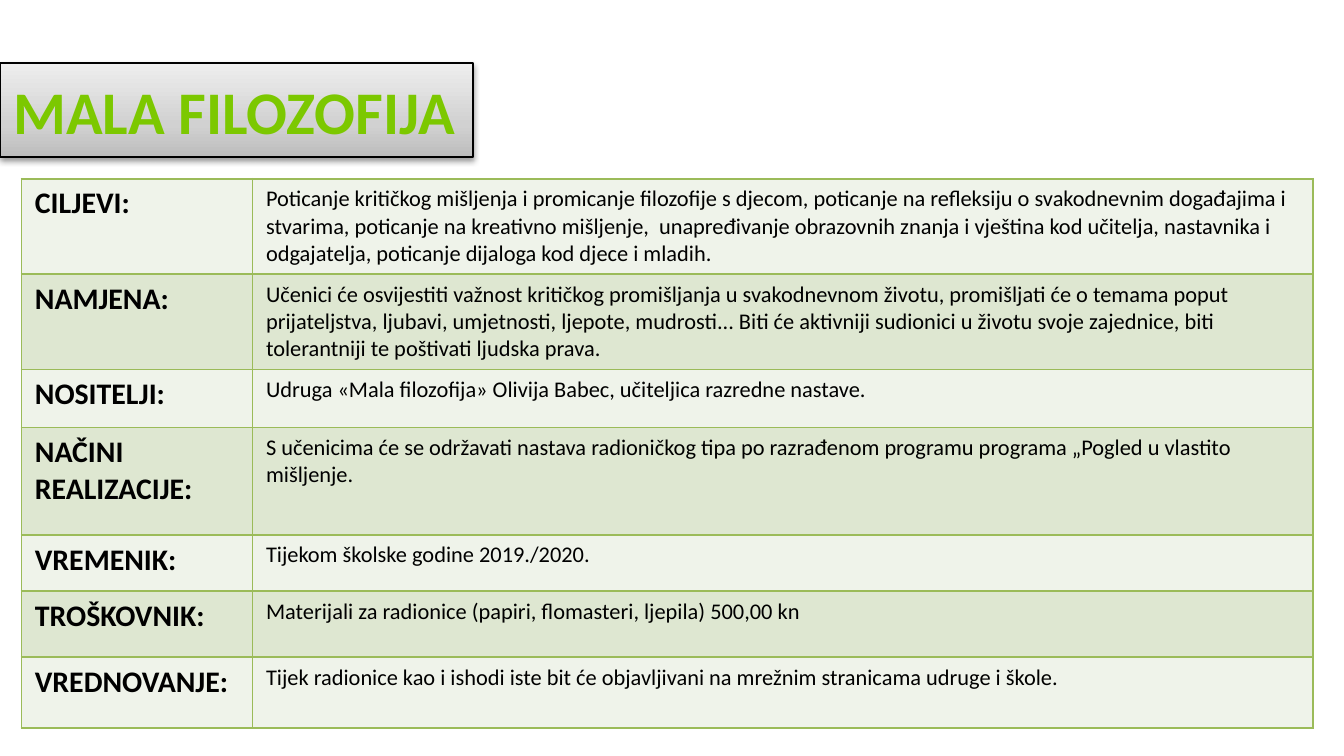
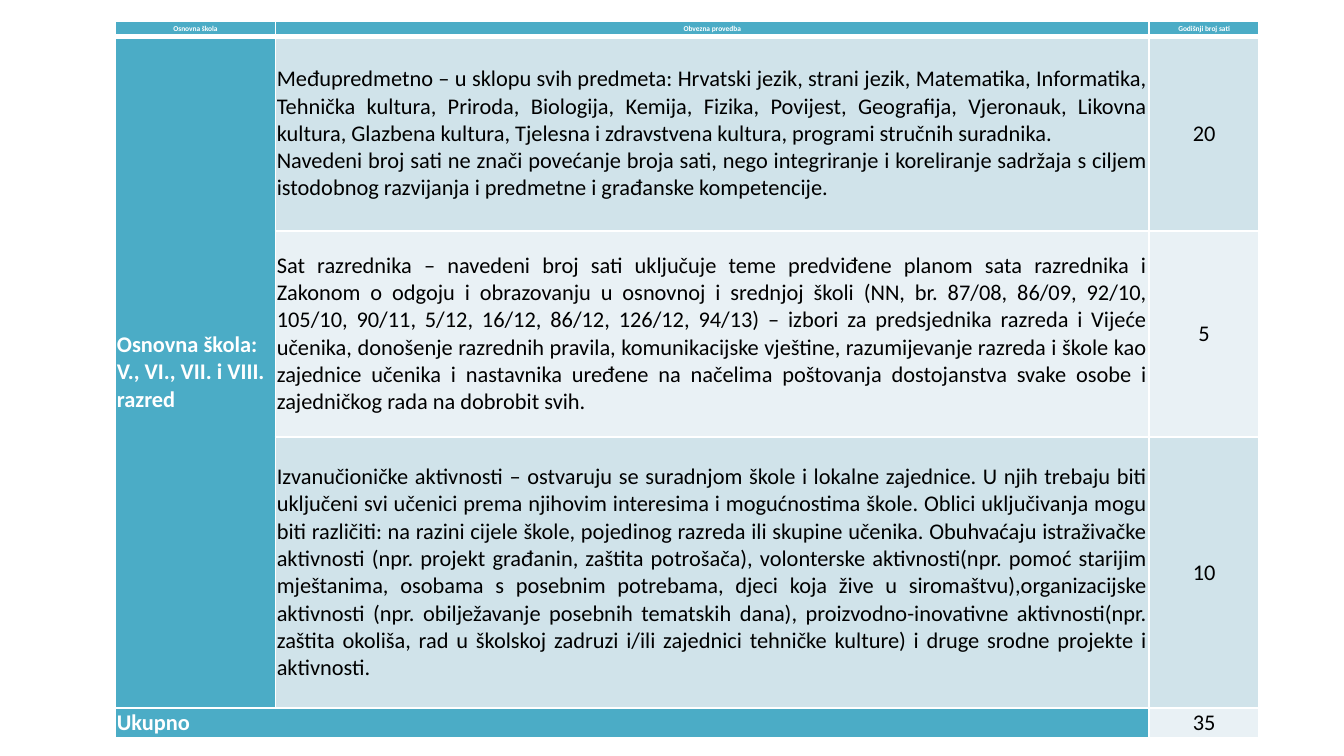
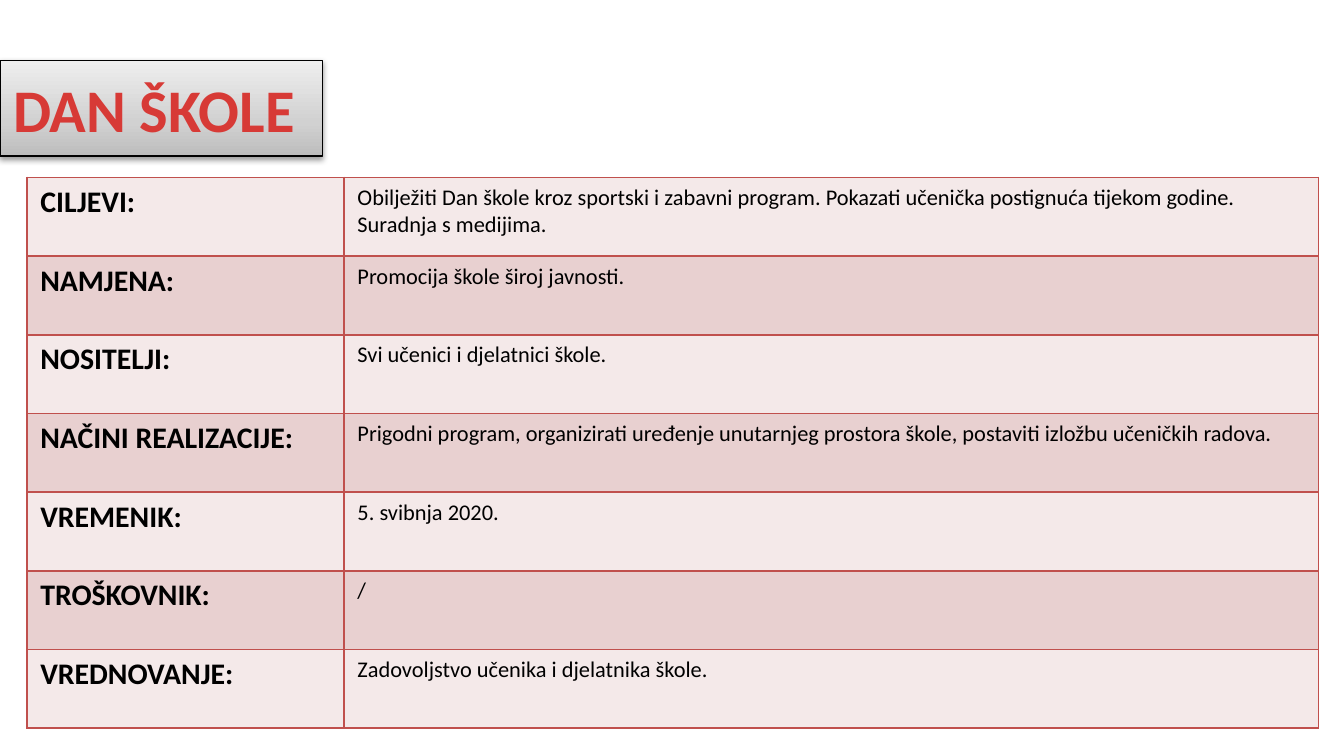
import copy

import lxml.etree
import pptx
import pptx.dml.color
import pptx.enum.shapes
import pptx.enum.text
import pptx.oxml.ns
import pptx.util

Inches = pptx.util.Inches
Pt = pptx.util.Pt
qn = pptx.oxml.ns.qn
ALIGN = pptx.enum.text.PP_ALIGN
MIDDLE = pptx.enum.text.MSO_ANCHOR.MIDDLE
TOP = pptx.enum.text.MSO_ANCHOR.TOP

FONT = "Calibri"
BLACK = "000000"
WHITE = "FFFFFF"
TEAL = "4BACC6"
TEAL_BANDS = ["D0E3EA", "E9F1F5"]
TITLE_STOPS = [(0, "BDBDBD"), (0.35, "D1D1D1"), (1, "EEEEEE")]
LABELS = ["CILJEVI:", "NAMJENA:", "NOSITELJI:", "NAČINI REALIZACIJE:",
          "VREMENIK:", "TROŠKOVNIK:", "VREDNOVANJE:"]


def color(value):
    return pptx.dml.color.RGBColor.from_string(value)


def write_cell(cell, lines, fill, borders, cell_format, text_format, text_color):
    properties = cell._tc.get_or_add_tcPr()
    for side, (border_color, width) in borders.items():
        line = lxml.etree.SubElement(properties, qn("a:ln" + side), w=str(Pt(width)))
        solid = lxml.etree.SubElement(line, qn("a:solidFill"))
        lxml.etree.SubElement(solid, qn("a:srgbClr"), val=border_color)
    cell.fill.solid()
    cell.fill.fore_color.rgb = color(fill)
    for name, value in cell_format.items():
        setattr(cell, name, value)
    for index, (text, alignment) in enumerate(lines):
        frame = cell.text_frame
        para = frame.paragraphs[0] if index == 0 else frame.add_paragraph()
        para.alignment = alignment
        span = para.add_run()
        span.text = text
        for name, value in text_format.items():
            setattr(span.font, name, value)
        span.font.color.rgb = color(text_color)


activities = [
    {
        "title": "MALA FILOZOFIJA", "title_color": "7CC800",
        "title_box": (0, 0.47, 3.52, 0.7),
        "left": 0.16, "top": 1.33, "columns": [1.72, 7.89],
        "rows": [0.7, 0.7, 0.43, 0.8, 0.42, 0.49, 0.53],
        "border": "9BBB59", "bands": ["EFF3EA", "DEE7D1"],
        "details": [
            "Poticanje kritičkog mišljenja i promicanje filozofije s djecom, poticanje na refleksiju o svakodnevnim događajima i stvarima, poticanje na kreativno mišljenje,  unapređivanje obrazovnih znanja i vještina kod učitelja, nastavnika i odgajatelja, poticanje dijaloga kod djece i mladih.",
            "Učenici će osvijestiti važnost kritičkog promišljanja u svakodnevnom životu, promišljati će o temama poput prijateljstva, ljubavi, umjetnosti, ljepote, mudrosti... Biti će aktivniji sudionici u životu svoje zajednice, biti tolerantniji te poštivati ljudska prava.",
            "Udruga «Mala filozofija» Olivija Babec, učiteljica razredne nastave.",
            "S učenicima će se održavati nastava radioničkog tipa po razrađenom programu programa „Pogled u vlastito mišljenje.",
            "Tijekom školske godine 2019./2020.",
            "Materijali za radionice (papiri, flomasteri, ljepila) 500,00 kn",
            "Tijek radionice kao i ishodi iste bit će objavljivani na mrežnim stranicama udruge i škole.",
        ],
    },
    {
        "title": "DAN ŠKOLE", "title_color": "D73A36",
        "title_box": (0, 0.45, 2.4, 0.71),
        "left": 0.2, "top": 1.32, "columns": [2.36, 7.25],
        "rows": [4.1 / len(LABELS)] * len(LABELS),
        "border": "C0504D", "bands": ["F4E9E9", "E8D0D0"],
        "details": [
            "Obilježiti Dan škole kroz sportski i zabavni program. Pokazati učenička postignuća tijekom godine. Suradnja s medijima.",
            "Promocija škole široj javnosti.",
            "Svi učenici i djelatnici škole.",
            "Prigodni program, organizirati uređenje unutarnjeg prostora škole, postaviti izložbu učeničkih radova.",
            "5. svibnja 2020.",
            "/",
            "Zadovoljstvo učenika i djelatnika škole.",
        ],
    },
]

hours = {
    "left": 0.86, "top": 0.16, "columns": [1.19, 6.5, 0.82],
    "rows": [0.11, 1.45, 1.53, 2.02, 0.2],
    "header": ["Osnovna škola", "Obvezna provedba", "Godišnji broj sati"],
    "school": [("Osnovna škola:", ALIGN.JUSTIFY), ("V., VI., VII. i VIII. razred", ALIGN.LEFT)],
    "programme": [
        (["Međupredmetno – u sklopu svih predmeta: Hrvatski jezik, strani jezik, Matematika, Informatika, Tehnička kultura, Priroda, Biologija, Kemija, Fizika, Povijest, Geografija, Vjeronauk, Likovna kultura, Glazbena kultura, Tjelesna i zdravstvena kultura, programi stručnih suradnika.",
          "Navedeni broj sati ne znači povećanje broja sati, nego integriranje i koreliranje sadržaja s ciljem istodobnog razvijanja i predmetne i građanske kompetencije."], "20"),
        (["Sat razrednika – navedeni broj sati uključuje teme predviđene planom sata razrednika i Zakonom o odgoju i obrazovanju u osnovnoj i srednjoj školi (NN, br. 87/08, 86/09, 92/10, 105/10, 90/11, 5/12, 16/12, 86/12, 126/12, 94/13) – izbori za predsjednika razreda i Vijeće učenika, donošenje razrednih pravila, komunikacijske vještine, razumijevanje razreda i škole kao zajednice učenika i nastavnika uređene na načelima poštovanja dostojanstva svake osobe i zajedničkog rada na dobrobit svih."], "5"),
        (["Izvanučioničke aktivnosti – ostvaruju se suradnjom škole i lokalne zajednice. U njih trebaju biti uključeni svi učenici prema njihovim interesima i mogućnostima škole. Oblici uključivanja mogu biti različiti: na razini cijele škole, pojedinog razreda ili skupine učenika. Obuhvaćaju istraživačke aktivnosti (npr. projekt građanin, zaštita potrošača), volonterske aktivnosti(npr. pomoć starijim mještanima, osobama s posebnim potrebama, djeci koja žive u siromaštvu),organizacijske aktivnosti (npr. obilježavanje posebnih tematskih dana), proizvodno-inovativne aktivnosti(npr. zaštita okoliša, rad u školskoj zadruzi i/ili zajednici tehničke kulture) i druge srodne projekte i aktivnosti."], "10"),
    ],
}

deck = pptx.Presentation()
deck.slide_width = Inches(10)
deck.slide_height = deck.slide_width * 9 // 16
pages = [deck.slides.add_slide(deck.slide_layouts[6]) for _ in range(3)]

tables = []
for page, layout in zip(pages, [activities[0], hours, activities[1]]):
    frame = page.shapes.add_table(
        len(layout["rows"]), len(layout["columns"]),
        Inches(layout["left"]), Inches(layout["top"]),
        Inches(sum(layout["columns"])), Inches(sum(layout["rows"])))
    table = frame.table
    table.first_row = False
    table.horz_banding = False
    for column, width in zip(table.columns, layout["columns"]):
        column.width = Inches(width)
    for row, height in zip(table.rows, layout["rows"]):
        row.height = Inches(height)
    tables.append(table)

for page, table, activity in zip(pages[::2], tables[::2], activities):
    box = page.shapes.add_shape(
        pptx.enum.shapes.MSO_SHAPE.RECTANGLE, *map(Inches, activity["title_box"]))
    box.fill.gradient()
    box.fill.gradient_angle = 90
    stop_list = box._element.spPr.find(".//" + qn("a:gsLst"))
    stop_list.append(copy.deepcopy(stop_list[0]))
    for stop, (position, shade) in zip(box.fill.gradient_stops, TITLE_STOPS):
        stop.position = position
        stop.color.rgb = color(shade)
    box.line.color.rgb = color(BLACK)
    box.line.width = Pt(0.75)
    box.shadow.inherit = False
    effects = box._element.spPr.find(qn("a:effectLst"))
    shadow = lxml.etree.SubElement(
        effects, qn("a:outerShdw"), blurRad=str(Pt(3.1)), dist=str(Pt(1.6)),
        dir="5400000", rotWithShape="0")
    shade = lxml.etree.SubElement(shadow, qn("a:srgbClr"), val=BLACK)
    lxml.etree.SubElement(shade, qn("a:alpha"), val="38000")
    box.text_frame.word_wrap = True
    box.text_frame.vertical_anchor = MIDDLE
    para = box.text_frame.paragraphs[0]
    para.alignment = ALIGN.LEFT
    span = para.add_run()
    span.text = activity["title"]
    for name, value in {"name": FONT, "size": Pt(32.4), "bold": True}.items():
        setattr(span.font, name, value)
    span.font.color.rgb = color(activity["title_color"])

    borders = dict.fromkeys("LRTB", (activity["border"], 1))
    for row, texts in enumerate(zip(LABELS, activity["details"])):
        for column, (text, size) in enumerate(zip(texts, (16, 12))):
            write_cell(table.cell(row, column), [(text, ALIGN.LEFT)],
                       activity["bands"][row % 2], borders, {"vertical_anchor": TOP},
                       {"name": FONT, "size": Pt(size), "bold": column == 0}, BLACK)

grid = [[([(text, ALIGN.CENTER)], TEAL) for text in hours["header"]]]
for index, (lines, count) in enumerate(hours["programme"]):
    band = TEAL_BANDS[index % 2]
    grid.append([
        (hours["school"] if index == 0 else [], TEAL),
        ([(line, ALIGN.JUSTIFY) for line in lines], band),
        ([(count, ALIGN.CENTER)], band)])
grid.append([([("Ukupno", ALIGN.JUSTIFY)], TEAL), ([], TEAL),
             ([("35", ALIGN.CENTER)], TEAL_BANDS[1])])

tight = {"vertical_anchor": MIDDLE}
for side in ("left", "right", "top", "bottom"):
    tight["margin_" + side] = Inches(0.01)
hours_table = tables[1]
hours_table.cell(1, 0).merge(hours_table.cell(3, 0))
hours_table.cell(4, 0).merge(hours_table.cell(4, 1))
for row, cells in enumerate(grid):
    borders = dict.fromkeys("LRTB", (WHITE, 1))
    if row < 2:
        borders["B" if row == 0 else "T"] = (WHITE, 3)
    for column, (lines, fill) in enumerate(cells):
        strong = fill == TEAL
        write_cell(hours_table.cell(row, column), lines, fill, borders, tight,
                   {"name": FONT, "size": Pt(4 if row == 0 else 12), "bold": strong},
                   WHITE if strong else BLACK)

deck.save("out.pptx")
